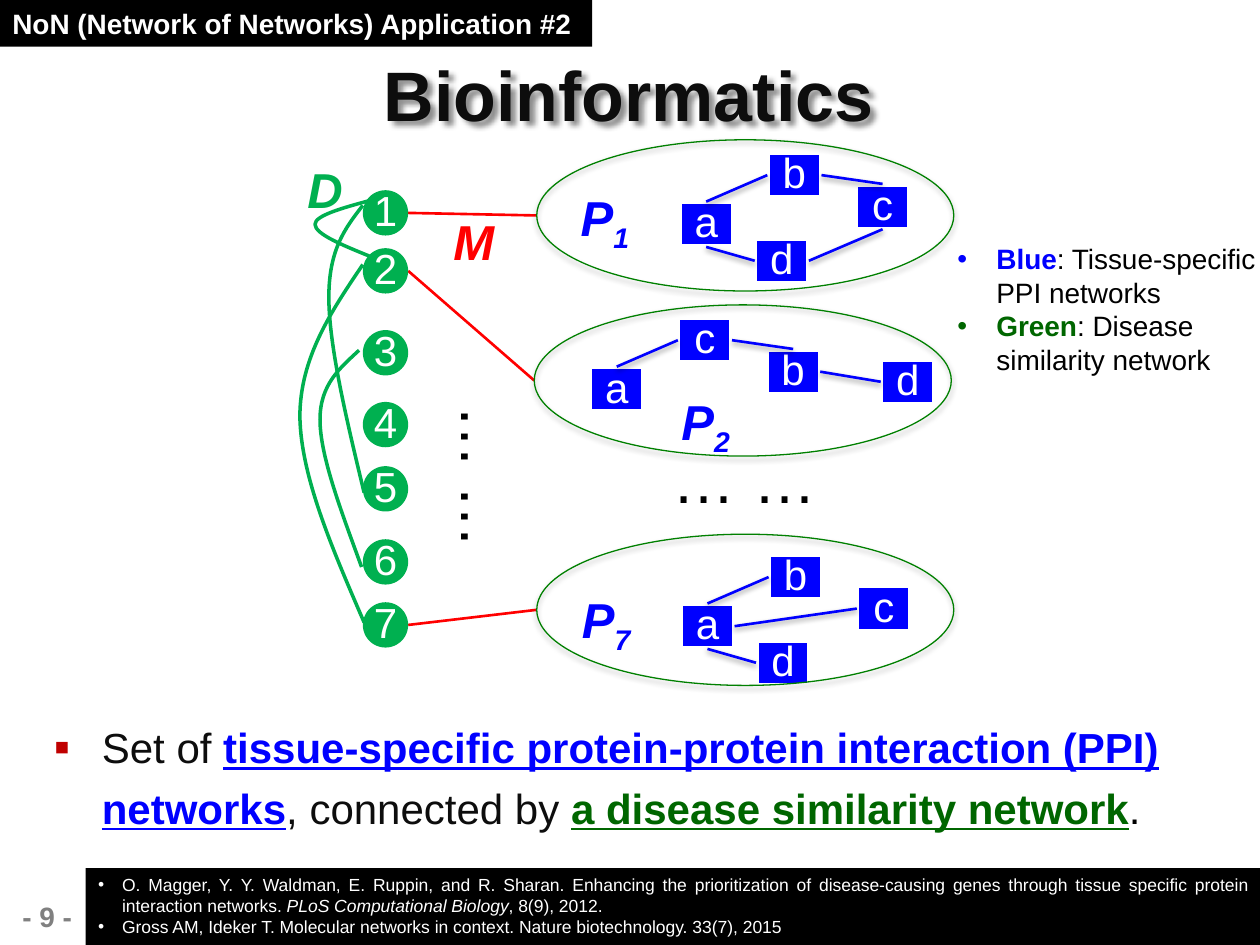
from lxml import etree
from pptx import Presentation
from pptx.dml.color import RGBColor
from pptx.enum.shapes import MSO_CONNECTOR, MSO_SHAPE
from pptx.enum.text import MSO_ANCHOR, MSO_AUTO_SIZE, PP_ALIGN
from pptx.oxml.ns import qn
from pptx.util import Inches, Pt

RECTANGLE, OVAL = MSO_SHAPE.RECTANGLE, MSO_SHAPE.OVAL
STRAIGHT = MSO_CONNECTOR.STRAIGHT
MIDDLE, TOP = MSO_ANCHOR.MIDDLE, MSO_ANCHOR.TOP
LEFT, CENTER, JUSTIFY = PP_ALIGN.LEFT, PP_ALIGN.CENTER, PP_ALIGN.JUSTIFY
NO_FIT = MSO_AUTO_SIZE.NONE

BLACK = RGBColor(0x00, 0x00, 0x00)
INK = RGBColor(0x0D, 0x0D, 0x0D)
WHITE = RGBColor(0xFF, 0xFF, 0xFF)
GRAY = RGBColor(0x80, 0x80, 0x80)
RED = RGBColor(0xFF, 0x00, 0x00)
DARK_RED = RGBColor(0xC0, 0x00, 0x00)
BLUE = RGBColor(0x00, 0x00, 0xFF)
GREEN = RGBColor(0x00, 0xB0, 0x50)
OUTLINE_GREEN = RGBColor(0x00, 0x80, 0x00)
DARK_GREEN = RGBColor(0x00, 0x66, 0x00)

FONT = "Arial"
NODE_SIZE = 0.36
BOX_WIDTH, BOX_HEIGHT = 0.43, 0.36
OVAL_WIDTH, OVAL_HEIGHT = 3.31, 1.2
NODE_LEFT = 2.88
NODE_TOPS = [1.51, 1.97, 2.62, 3.19, 3.7, 4.28, 4.78]

# Where a line may touch a box, as fractions of its width and height
SIDES = {"top": (0.5, 0), "bottom": (0.5, 1), "left": (0, 0.5), "right": (1, 0.5)}

# Index, oval corner, label corner, box corners, edges, linked disease node
NETWORKS = [
    ("1", (4.26, 1.11), (4.51, 1.44),
     {"a": (5.39, 1.6), "b": (6.09, 1.21), "c": (6.79, 1.46), "d": (5.99, 1.89)},
     ["a top b left", "b right c top", "a bottom d left", "d right c bottom"], 1),
    ("2", (4.24, 2.42), (5.31, 3.06),
     {"a": (4.68, 2.91), "b": (6.08, 2.77), "c": (5.38, 2.52), "d": (6.99, 2.85)},
     ["a top c left", "c right b top", "b right d left"], 2),
    ("7", (4.26, 4.24), (4.52, 4.63),
     {"a": (5.4, 4.79), "b": (6.1, 4.4), "c": (6.8, 4.65), "d": (6, 5.08)},
     ["a top b left", "a right c left", "a bottom d left"], 7),
]

# Disease links: start point, then two Bezier segments of three points each
DISEASE_CURVES = [
    [(2.88, 1.63), (2.74, 1.81), (2.61, 1.98), (2.61, 2.36),
     (2.61, 2.74), (2.75, 3.33), (2.89, 3.91)],
    [(2.85, 2.78), (2.7, 2.92), (2.54, 3.05), (2.54, 3.33),
     (2.54, 3.62), (2.71, 4.06), (2.87, 4.5)],
    [(2.88, 2.1), (2.63, 2.47), (2.38, 2.84), (2.38, 3.31),
     (2.39, 3.79), (2.64, 4.36), (2.89, 4.94)],
    [(2.94, 1.59), (2.72, 1.65), (2.5, 1.71), (2.5, 1.78),
     (2.5, 1.86), (2.73, 1.95), (2.95, 2.04)],
]


def set_effects(shape, shadow=None):
    """Append an effect list; shadow is (opacity %, blur pt, distance pt, degrees)."""
    effects = etree.SubElement(shape._element.spPr, qn("a:effectLst"))
    if shadow:
        opacity, blur, distance, angle = shadow
        outer = etree.SubElement(
            effects, qn("a:outerShdw"), blurRad=str(int(Pt(blur))),
            dist=str(int(Pt(distance))), dir=str(angle * 60000), rotWithShape="0")
        color = etree.SubElement(outer, qn("a:srgbClr"), val=str(BLACK))
        etree.SubElement(color, qn("a:alpha"), val=str(opacity * 1000))


def add_text(paragraph, text, size=16, color=BLACK, bold=False, italic=False,
             underline=False, baseline=0):
    run = paragraph.add_run()
    run.text = text
    font = run.font
    font.name, font.size, font.color.rgb = FONT, Pt(size), color
    font.bold, font.italic, font.underline = bold, italic, underline
    if baseline:
        run._r.get_or_add_rPr().set("baseline", str(baseline * 1000))


def add_bullet(paragraph, character, indent, color, percent=100):
    properties = paragraph._p.get_or_add_pPr()
    properties.set("marL", str(int(Inches(indent))))
    properties.set("indent", str(-int(Inches(indent))))
    bullet_color = etree.SubElement(properties, qn("a:buClr"))
    etree.SubElement(bullet_color, qn("a:srgbClr"), val=str(color))
    etree.SubElement(properties, qn("a:buSzPct"), val=str(percent * 1000))
    etree.SubElement(properties, qn("a:buFont"), typeface=FONT)
    etree.SubElement(properties, qn("a:buChar"), char=character)


def add_text_box(slide, left, top, width, height, wrap=True):
    box = slide.shapes.add_textbox(
        Inches(left), Inches(top), Inches(width), Inches(height))
    box.text_frame.word_wrap = wrap
    return box


def add_label(slide, left, top, width, text, color, subscript=""):
    paragraph = add_text_box(slide, left, top, width, 0.57, False).text_frame.paragraphs[0]
    style = {"size": 28, "color": color, "bold": True, "italic": True}
    add_text(paragraph, text, **style)
    if subscript:
        add_text(paragraph, subscript, baseline=-25, **style)


def add_block(slide, kind, left, top, width, height, fill=None, line=None,
              line_width=1, shadow=None):
    shape = slide.shapes.add_shape(
        kind, Inches(left), Inches(top), Inches(width), Inches(height))
    if fill is None:
        shape.fill.background()
    else:
        shape.fill.solid()
        shape.fill.fore_color.rgb = fill
    if line is None:
        shape.line.fill.background()
    else:
        shape.line.color.rgb = line
        shape.line.width = Pt(line_width)
    set_effects(shape, shadow)
    shape.text_frame.vertical_anchor = TOP
    shape.text_frame.paragraphs[0].alignment = LEFT
    return shape


def add_node(slide, kind, left, top, width, height, text, **look):
    frame = add_block(slide, kind, left, top, width, height, **look).text_frame
    frame.margin_left = frame.margin_top = frame.margin_right = 0
    frame.margin_bottom = Inches(0.05)
    frame.vertical_anchor = MIDDLE
    frame.paragraphs[0].alignment = CENTER
    add_text(frame.paragraphs[0], text, size=24, color=WHITE)


def add_line(slide, start, end, color, shadow=None):
    x1, y1, x2, y2 = [Inches(value) for value in (*start, *end)]
    line = slide.shapes.add_connector(STRAIGHT, x1, y1, x2, y2)
    line.line.color.rgb = color
    line.line.width = Pt(1.5)
    set_effects(line, shadow)


def add_curve(slide, points):
    """Draw an open outline and turn each three line steps into one Bezier segment."""
    start, *others = [(Inches(x), Inches(y)) for x, y in points]
    builder = slide.shapes.build_freeform(*start)
    builder.add_line_segments(others, close=False)
    curve = builder.convert_to_shape()
    steps = list(curve._element.iter(qn("a:lnTo")))
    outline = steps[0].getparent()
    for first in range(0, len(steps), 3):
        segment = etree.SubElement(outline, qn("a:cubicBezTo"))
        for step in steps[first:first + 3]:
            segment.append(step[0])
            outline.remove(step)
    curve.fill.background()
    curve.line.color.rgb = GREEN
    curve.line.width = Pt(2)
    set_effects(curve)


def add_network(slide, index, corner, label, boxes, edges):
    add_label(slide, *label, 0.61, "P", BLUE, subscript=index)
    for name, position in boxes.items():
        add_node(slide, RECTANGLE, *position, BOX_WIDTH, BOX_HEIGHT, name,
                 fill=BLUE, line=WHITE, line_width=3)
    for edge in edges:
        start, start_side, end, end_side = edge.split()
        ends = [(boxes[name][0] + SIDES[side][0] * BOX_WIDTH,
                 boxes[name][1] + SIDES[side][1] * BOX_HEIGHT)
                for name, side in ((start, start_side), (end, end_side))]
        add_line(slide, *ends, BLUE, shadow=(38, 3.1, 1.6, 90))
    add_block(slide, OVAL, *corner, OVAL_WIDTH, OVAL_HEIGHT, line=OUTLINE_GREEN,
              line_width=0.75, shadow=(35, 3.1, 1.8, 90))


def add_diagram(slide):
    # Red links from diseases to their networks
    for _, (left, top), _, _, _, node in NETWORKS:
        start = (NODE_LEFT + NODE_SIZE, NODE_TOPS[node - 1] + NODE_SIZE / 2)
        add_line(slide, start, (left, top + OVAL_HEIGHT / 2), RED)
    # Disease similarity network
    for number, top in enumerate(NODE_TOPS, 1):
        add_node(slide, OVAL, NODE_LEFT, top, NODE_SIZE, NODE_SIZE, str(number), fill=GREEN)
    for points in DISEASE_CURVES:
        add_curve(slide, points)
    add_label(slide, 2.34, 1.22, 0.49, "D", GREEN)
    add_label(slide, 3.5, 1.63, 0.53, "M", RED)
    # Tissue-specific networks
    for *network, _ in NETWORKS:
        add_network(slide, *network)
    # Dots for the networks and links left out
    for left, top, rotation in ((5.24, 3.45, 0), (3.18, 3.44, 90)):
        dots = add_text_box(slide, left, top, 1.35, 0.71, False)
        dots.rotation = rotation
        add_text(dots.text_frame.paragraphs[0], "… …", size=36)


def add_title(slide):
    title = slide.shapes.title
    title.left, title.top, title.width, title.height = map(Inches, (0.49, 0.3, 9, 0.88))
    title.fill.background()
    set_effects(title, (43, 3, 3, 45))
    frame = title.text_frame
    frame.margin_left = frame.margin_top = frame.margin_right = frame.margin_bottom = 0
    frame.vertical_anchor, frame.auto_size = MIDDLE, NO_FIT
    frame.paragraphs[0].alignment = CENTER
    add_text(frame.paragraphs[0], "Bioinformatics", size=40, color=INK, bold=True)


def add_statement(slide):
    paragraph = add_text_box(slide, 0.33, 5.6, 9.95, 0.76).text_frame.paragraphs[0]
    add_bullet(paragraph, "▪", 0.38, DARK_RED, 110)
    paragraph.line_spacing = 1.2
    strong = {"size": 24, "bold": True, "underline": True}
    add_text(paragraph, "Set of ", size=24, color=INK)
    add_text(paragraph, "tissue-specific protein-protein interaction (PPI) networks",
             color=BLUE, **strong)
    add_text(paragraph, ", connected by ", size=24, color=INK)
    add_text(paragraph, "a disease similarity network", color=DARK_GREEN, **strong)
    add_text(paragraph, ".", size=24)


def add_legend(slide):
    frame = add_text_box(slide, 7.5, 1.87, 2.6, 1.18).text_frame
    entries = [("Blue", BLUE, ": Tissue-specific PPI networks"),
               ("Green", DARK_GREEN, ": Disease similarity network")]
    for number, (name, color, meaning) in enumerate(entries):
        paragraph = frame.add_paragraph() if number else frame.paragraphs[0]
        add_bullet(paragraph, "•", 0.31, color)
        add_text(paragraph, name, color=color, bold=True)
        add_text(paragraph, meaning)


def add_references(slide):
    frame = add_block(slide, RECTANGLE, 0.68, 6.89, 9.32, 0.61, fill=BLACK).text_frame
    references = [
        [("O. Magger, Y. Y. Waldman, E. Ruppin, and R. Sharan. Enhancing the prioritization "
          "of disease-causing genes through tissue specific protein interaction networks. ",
          False), ("PLoS Computational Biology", True), (", 8(9), 2012. ", False)],
        [("Gross AM, Ideker T. Molecular networks in context. Nature biotechnology. "
          "33(7), 2015", False)],
    ]
    for number, parts in enumerate(references):
        paragraph = frame.add_paragraph() if number else frame.paragraphs[0]
        paragraph.alignment = JUSTIFY
        add_bullet(paragraph, "•", 0.19, WHITE)
        for text, italic in parts:
            add_text(paragraph, text, size=10, color=WHITE, italic=italic)


def main():
    presentation = Presentation()
    presentation.slide_width, presentation.slide_height = Inches(10), Inches(7.5)
    slide = presentation.slides.add_slide(presentation.slide_layouts[5])
    add_title(slide)
    add_statement(slide)
    # Page number
    page = add_text_box(slide, 0, 7.09, 0.75, 0.41).text_frame.paragraphs[0]
    page.alignment = CENTER
    add_text(page, "- 9 -", color=GRAY, bold=True)
    add_diagram(slide)
    add_references(slide)
    add_legend(slide)
    # Section banner
    banner = add_block(slide, RECTANGLE, 0, 0, 4.7, 0.37, fill=BLACK)
    add_text(banner.text_frame.paragraphs[0], "NoN (Network of Networks) Application #2",
             color=WHITE, bold=True)
    presentation.save("out.pptx")


if __name__ == "__main__":
    main()
